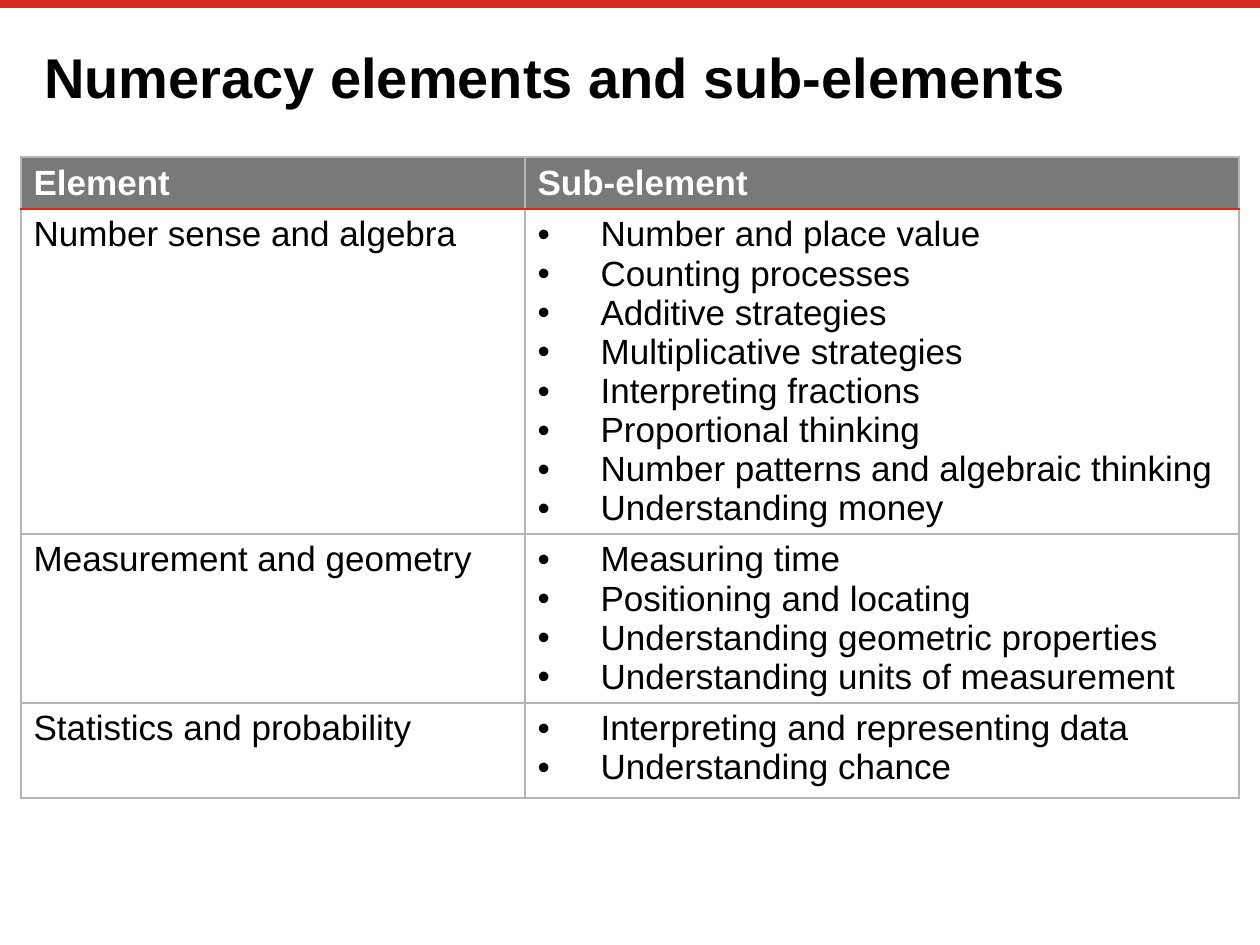
from lxml import etree
from pptx import Presentation
from pptx.dml.color import RGBColor
from pptx.enum.shapes import MSO_CONNECTOR
from pptx.enum.text import MSO_ANCHOR, MSO_AUTO_SIZE, PP_ALIGN
from pptx.oxml.ns import qn
from pptx.util import Pt

STRAIGHT = MSO_CONNECTOR.STRAIGHT
TOP = MSO_ANCHOR.TOP
NO_FIT = MSO_AUTO_SIZE.NONE
LEFT = PP_ALIGN.LEFT
EMU_PER_PX = 914400 / 126
TITLE_ONLY = 5

ELEMENTS = {
    "Number sense and algebra": [
        "Number and place value",
        "Counting processes",
        "Additive strategies",
        "Multiplicative strategies",
        "Interpreting fractions",
        "Proportional thinking",
        "Number patterns and algebraic thinking",
        "Understanding money",
    ],
    "Measurement and geometry": [
        "Measuring time",
        "Positioning and locating",
        "Understanding geometric properties",
        "Understanding units of measurement",
    ],
    "Statistics and probability": [
        "Interpreting and representing data",
        "Understanding chance",
    ],
}


def px(length):
    return round(length * EMU_PER_PX)


def color(value):
    return RGBColor.from_string(value)


class SlideBuilder:
    font = "Arial"
    red, gray, grid = "D52B1E", "797979", "B5B5B5"
    black, white = "000000", "FFFFFF"

    def __init__(self, slide):
        self.slide = slide

    def style(self, paragraph, size, font_color, bold=False):
        font = paragraph.font
        font.name, font.size, font.bold = self.font, Pt(size), bold
        font.color.rgb = color(font_color)

    def title(self, text, left, top, width, height):
        title = self.slide.shapes.title
        title.left, title.top = px(left), px(top)
        title.width, title.height = px(width), px(height)
        frame = title.text_frame
        frame.text = text
        frame.word_wrap = True
        frame.auto_size = NO_FIT
        frame.vertical_anchor = TOP
        frame.margin_left = frame.margin_right = frame.margin_bottom = 0
        frame.margin_top = px(7)
        paragraph = frame.paragraphs[0]
        paragraph.alignment = LEFT
        self.style(paragraph, 32, self.black, bold=True)

    def line(self, x1, y1, x2, y2, width):
        line = self.slide.shapes.add_connector(STRAIGHT, px(x1), px(y1), px(x2), px(y2))
        line.line.color.rgb = color(self.red)
        line.line.width = Pt(width)
        etree.SubElement(line._element.spPr, qn("a:effectLst"))

    def border(self, cell, side, line_color, width):
        """Side is L, R, T or B; call in that order, before the cell is filled."""
        properties = cell._tc.get_or_add_tcPr()
        line = etree.SubElement(properties, qn(f"a:ln{side}"), w=str(Pt(width)))
        fill = etree.SubElement(line, qn("a:solidFill"))
        etree.SubElement(fill, qn("a:srgbClr"), val=line_color)

    def bullet(self, paragraph):
        properties = paragraph._p.get_or_add_pPr()
        properties.set("marL", str(px(63)))
        properties.set("indent", str(px(-63)))
        etree.SubElement(properties, qn("a:buFont"), typeface=self.font)
        etree.SubElement(properties, qn("a:buChar"), char="•")

    def cell(self, cell, lines, row, bulleted):
        is_header = row == 0
        for side in "LRTB":
            is_red = (row, side) in ((0, "B"), (1, "T"))
            self.border(cell, side, self.red if is_red else self.grid, 1.5 if is_red else 1)
        if is_header:
            cell.fill.solid()
            cell.fill.fore_color.rgb = color(self.gray)
        else:
            cell.fill.background()
        cell.text = "\n".join(lines)
        for paragraph in cell.text_frame.paragraphs:
            if bulleted:
                self.bullet(paragraph)
            self.style(paragraph, 20, self.white if is_header else self.black, is_header)

    def table(self, rows, left, top, column_widths, row_heights):
        table = self.slide.shapes.add_table(
            len(rows), len(column_widths), px(left), px(top),
            px(sum(column_widths)), px(sum(row_heights))).table
        table.horz_banding = False
        for column, width in zip(table.columns, column_widths):
            column.width = px(width)
        for row, height in zip(table.rows, row_heights):
            row.height = px(height)
        for i, texts in enumerate(rows):
            for j, lines in enumerate(texts):
                self.cell(table.cell(i, j), lines, i, bulleted=i > 0 and j == 1)


def main():
    presentation = Presentation()
    presentation.slide_width, presentation.slide_height = px(1260), px(945)
    slide = presentation.slides.add_slide(presentation.slide_layouts[TITLE_ONLY])
    builder = SlideBuilder(slide)
    builder.line(0, 4, 1260, 4, 4.2)
    builder.title("Numeracy elements and sub-elements", 44, 35, 1170, 61)
    rows = [(["Element"], ["Sub-element"])]
    rows += [([element], parts) for element, parts in ELEMENTS.items()]
    builder.table(rows, 21, 157, [504, 714], [52, 325, 168, 95])
    presentation.save("out.pptx")


if __name__ == "__main__":
    main()
